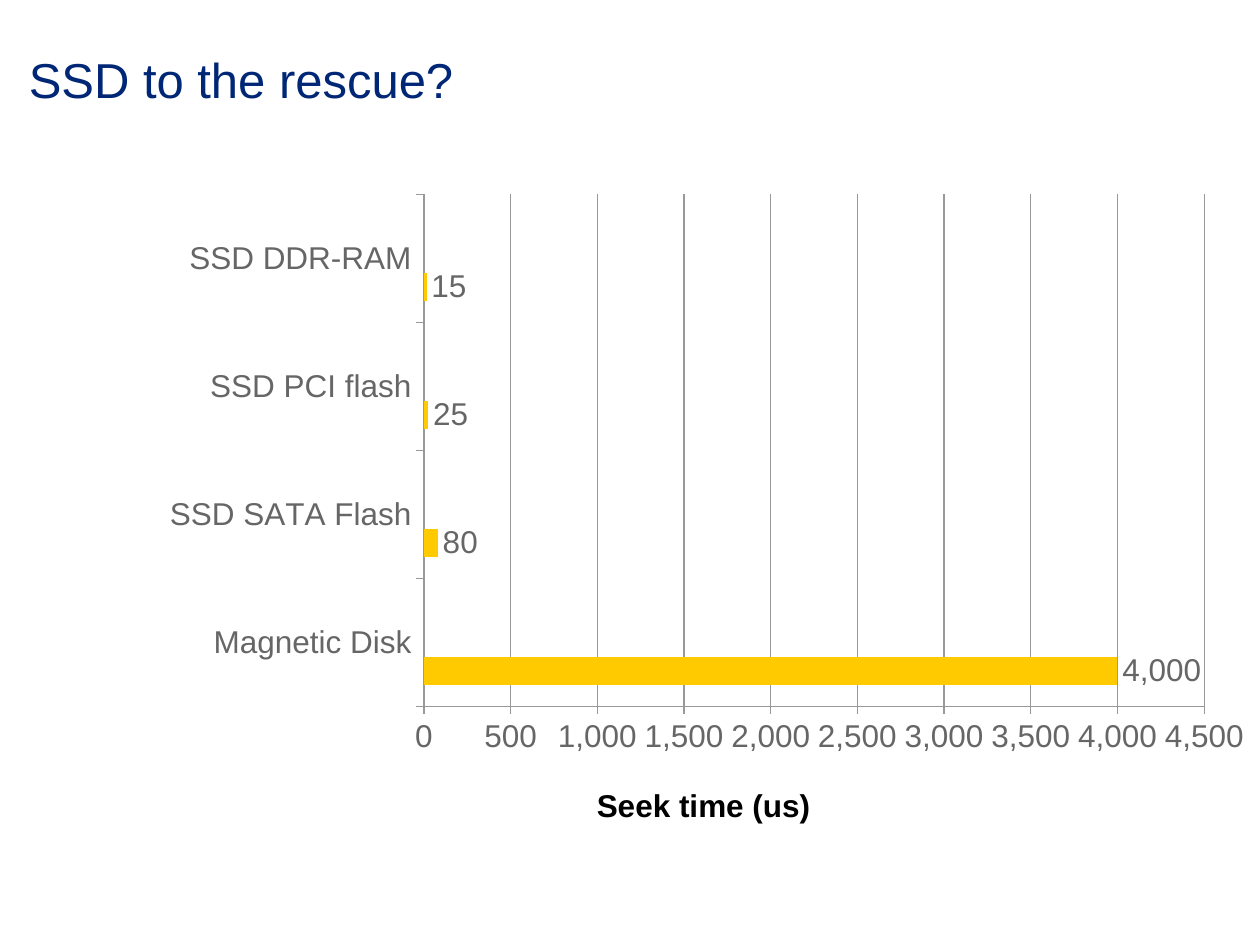
import pptx
import pptx.chart.data
import pptx.dml.color
import pptx.enum.chart
import pptx.enum.text
import pptx.oxml
import pptx.oxml.ns
import pptx.util

Pt = pptx.util.Pt


def paint(color_format, value):
    color_format.rgb = pptx.dml.color.RGBColor.from_string(value)


def place(element, index, target, **fractions):
    for old in element.findall(pptx.oxml.ns.qn("c:layout")):
        element.remove(old)
    modes = f'<c:layoutTarget val="{target}"/>' if target else ""
    modes += '<c:xMode val="edge"/><c:yMode val="edge"/>'
    values = "".join(f'<c:{key} val="{value}"/>' for key, value in fractions.items())
    namespace = pptx.oxml.ns.nsdecls("c")
    element.insert(index, pptx.oxml.parse_xml(
        f"<c:layout {namespace}><c:manualLayout>{modes}{values}</c:manualLayout></c:layout>"))


presentation = pptx.Presentation()
presentation.slide_width, presentation.slide_height = Pt(720), Pt(540)
slide = presentation.slides.add_slide(presentation.slide_layouts[5])

title = slide.shapes.title
title_box = {"left": Pt(16.5), "top": Pt(24), "width": Pt(612), "height": Pt(42.5)}
for name, value in title_box.items():
    setattr(title, name, value)
frame = title.text_frame
frame.text = "SSD to the rescue?"
frame_format = {
    "margin_left": Pt(0),
    "margin_right": Pt(7.2),
    "margin_top": Pt(3.6),
    "margin_bottom": Pt(3.6),
    "word_wrap": False,
    "auto_size": pptx.enum.text.MSO_AUTO_SIZE.NONE,
    "vertical_anchor": pptx.enum.text.MSO_ANCHOR.MIDDLE,
}
for name, value in frame_format.items():
    setattr(frame, name, value)
paragraph = frame.paragraphs[0]
paragraph.alignment = pptx.enum.text.PP_ALIGN.LEFT
title_font = paragraph.runs[0].font
for name, value in {"name": "Arial", "size": Pt(28), "bold": False}.items():
    setattr(title_font, name, value)
paint(title_font.color, "002776")

seek_times = pptx.chart.data.CategoryChartData(number_format="#,##0")
seek_times.categories = ["Magnetic Disk", "SSD SATA Flash", "SSD PCI flash", "SSD DDR-RAM"]
seek_times.add_series("Series 1", [4000, 80, 25, 15])
for name in ("Series 2", "Series 3"):
    seek_times.add_series(name, [None] * 4)
chart = slide.shapes.add_chart(
    pptx.enum.chart.XL_CHART_TYPE.BAR_CLUSTERED,
    Pt(83), Pt(103.5), Pt(637), Pt(380), seek_times).chart
chart.has_legend = False
chart.has_title = False
for name, value in {"name": "Arial", "size": Pt(18), "bold": False}.items():
    setattr(chart.font, name, value)
paint(chart.font.color, "666666")

plot = chart.plots[0]
for name, value in {"gap_width": 150, "overlap": 0, "vary_by_categories": False}.items():
    setattr(plot, name, value)
for series, color in zip(plot.series, ["FFCB00", "00ADED", "A0C664"]):
    series.format.fill.solid()
    paint(series.format.fill.fore_color, color)
    label_format = {
        "show_value": True,
        "position": pptx.enum.chart.XL_LABEL_POSITION.OUTSIDE_END,
        "number_format": "#,##0",
        "number_format_is_linked": False,
    }
    for name, value in label_format.items():
        setattr(series.data_labels, name, value)

category_axis, value_axis = chart.category_axis, chart.value_axis
value_format = {"minimum_scale": 0, "maximum_scale": 4500, "major_unit": 500,
                "has_major_gridlines": True, "has_title": True}
for name, value in value_format.items():
    setattr(value_axis, name, value)
value_axis.tick_labels.number_format = "#,##0"
value_axis.tick_labels.number_format_is_linked = False
category_axis.has_major_gridlines = False
for axis in (category_axis, value_axis):
    axis.major_tick_mark = pptx.enum.chart.XL_TICK_MARK.OUTSIDE
    axis.minor_tick_mark = pptx.enum.chart.XL_TICK_MARK.NONE
for part in (category_axis, value_axis, value_axis.major_gridlines):
    part.format.line.width = Pt(0.75)
    paint(part.format.line.color, "999999")

axis_title = value_axis.axis_title
axis_title.text_frame.text = "Seek time (us)"
axis_font = axis_title.text_frame.paragraphs[0].runs[0].font
for name, value in {"name": "Arial", "size": Pt(18), "bold": True}.items():
    setattr(axis_font, name, value)
paint(axis_font.color, "000000")

place(plot._element.getparent(), 0, "inner", x=0.25, y=0.02, w=0.7, h=0.77)
place(axis_title._element, 1, "", x=0.4, y=0.9)

presentation.save("out.pptx")
